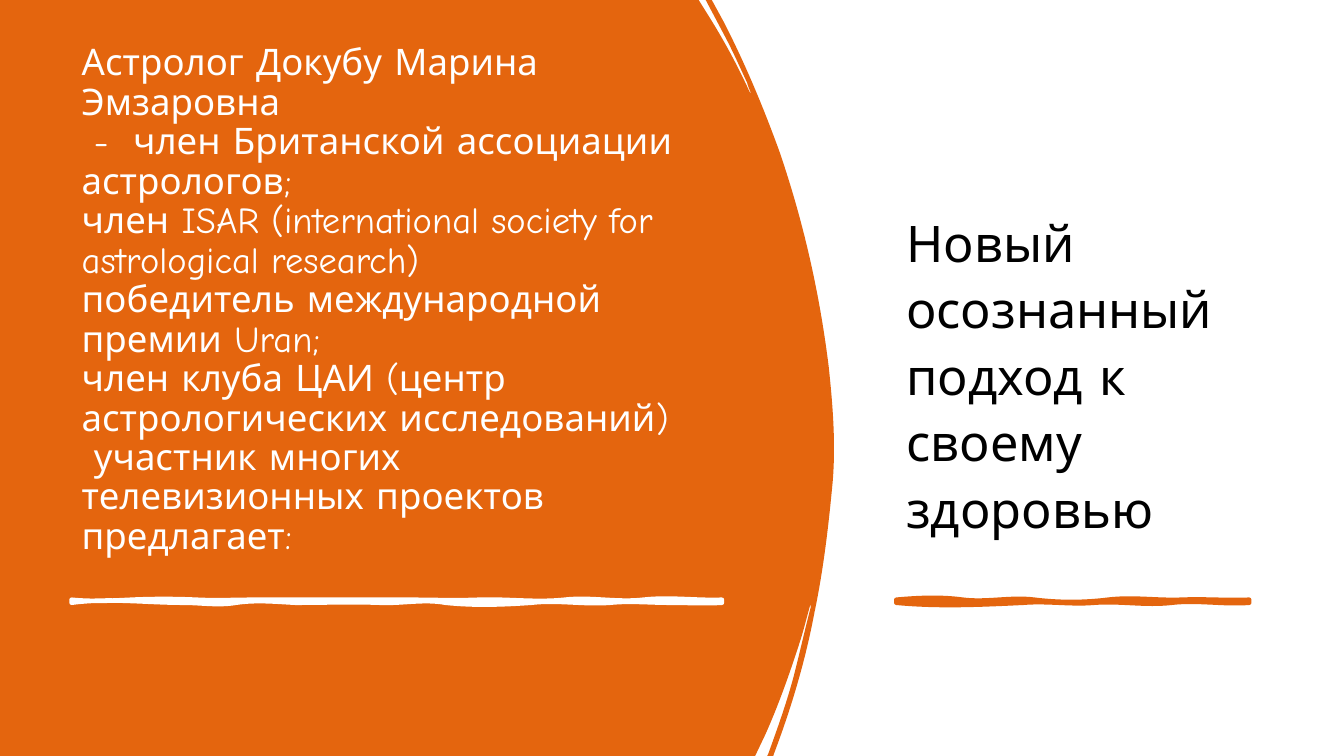
import lxml.etree
import pptx
import pptx.util
import pptx.dml.color
import pptx.enum.shapes
import pptx.enum.text
import pptx.oxml.ns

# Content
NBSP = chr(160)
TITLE_LINES = [
    "Астролог Докубу Марина Эмзаровна",
    f"{NBSP}-{NBSP} член Британской ассоциации астрологов; ",
    f"член ISAR (international society for astrological research){NBSP}",
    "победитель международной премии Uran;",
    "член клуба ЦАИ (центр астрологических исследований)",
    f"{NBSP}участник многих телевизионных{NBSP}проектов",
    "предлагает:",
]
BODY = "Новый осознанный подход к своему здоровью"

# Panel outline in inches: two numbers make a line, six a Bezier curve
PANEL = [
    (0, 0), (6.93, 0), (7.03, 0.16),
    (7.18, 0.4, 7.31, 0.64, 7.43, 0.9),
    (7.43, 0.91, 7.44, 0.92, 7.45, 0.93),
    (7.44, 0.9, 7.42, 0.86, 7.41, 0.82),
    (7.34, 0.67, 7.27, 0.51, 7.19, 0.36),
    (7, 0), (7.06, 0), (7.18, 0.22),
    (7.39, 0.63, 7.57, 1.06, 7.73, 1.5),
    (7.97, 2.2, 8.13, 2.91, 8.22, 3.64),
    (8.26, 4.02, 8.29, 4.39, 8.26, 4.77),
    (8.22, 5.2, 8.17, 5.64, 8.08, 6.07),
    (7.99, 6.55, 7.85, 7.02, 7.68, 7.47),
    (7.67, 7.5), (7.61, 7.5), (7.62, 7.48),
    (7.71, 7.23, 7.8, 6.98, 7.87, 6.72),
    (7.93, 6.49, 7.98, 6.26, 8.04, 6.03),
    (8.04, 6.02, 8.04, 6.01, 8.04, 5.99),
    (8, 6.13, 7.97, 6.26, 7.93, 6.38),
    (7.83, 6.69, 7.72, 7, 7.59, 7.29),
    (7.49, 7.5), (0, 7.5),
]

# Brush rules: start, then (knot x, bend of the first and second handle)
RULE_TOP, RULE_BOTTOM = 5.95, 5.98
TITLE_RULE = (
    0.71,
    [(1.3, 0.02, 0.01), (1.95, -0.01, -0.01), (2.54, 0.01, 0), (3.32, 0, 0),
     (4.04, 0, 0), (4.75, 0, 0.01), (5.6, -0.01, 0.03), (6.38, -0.03, 0.03),
     (7.16, -0.03, 0.01)],
    [(6.64, 0.01, 0), (6.05, 0, -0.02), (5.27, 0.02, -0.03), (4.42, 0.02, 0.03),
     (3.77, -0.04, 0.01), (2.93, -0.01, 0), (2.34, -0.01, -0.03),
     (1.82, 0.03, 0), (0.71, 0, -0.05)],
)
BODY_RULE = (
    8.89,
    [(9.55, -0.02, -0.03), (10.26, 0.03, -0.03), (10.99, 0.03, 0.03),
     (11.72, -0.03, 0.01), (12.39, -0.01, 0.01)],
    [(11.62, 0.02, -0.03), (10.85, 0.03, -0.02), (10.15, 0.02, -0.02),
     (8.89, 0.02, 0.04)],
)

THEME = {
    "font": "Comic Neue",
    "accent": pptx.dml.color.RGBColor.from_string("E4650E"),
    "light": pptx.dml.color.RGBColor.from_string("FFFFFF"),
    "dark": pptx.dml.color.RGBColor.from_string("000000"),
    "title": 26.1, "body": 36, "rule": 3.25,
}
WIDTH, HEIGHT = 13.33, 7.5
inch = pptx.util.Inches
qn = pptx.oxml.ns.qn


def rule_outline(start, top, bottom):
    """Wavy upper edge left to right, then the lower edge back."""
    outline, x0 = [(start, RULE_TOP)], start
    for y, edge in ((RULE_TOP, top), (RULE_BOTTOM, bottom)):
        if y == RULE_BOTTOM:
            outline.append((x0, y))
        for x, a, b in edge:
            third = (x - x0) / 3
            outline.append((x0 + third, y + a, x - third, y + b, x, y))
            x0 = x
    return outline


def paint(sp, color, line=None):
    sp.shadow.inherit = False
    sp.fill.solid()
    sp.fill.fore_color.rgb = color
    if line:
        sp.line.color.rgb = color
        sp.line.width = pptx.util.Pt(line)
    else:
        sp.line.fill.background()


def add_outline(slide, outline, color, line=None):
    ends = [(inch(seg[-2]), inch(seg[-1])) for seg in outline]
    builder = slide.shapes.build_freeform(*ends[0], scale=1.0)
    builder.add_line_segments(ends[1:], close=True)
    sp = builder.convert_to_shape()
    # Bend the straight segments that have handles
    for node, seg in zip(sp._element.xpath(".//a:lnTo"), outline[1:]):
        if len(seg) == 6:
            node.tag = qn("a:cubicBezTo")
            for i in (0, 2):
                pt = lxml.etree.Element(qn("a:pt"))
                pt.set("x", str(inch(seg[i]) - sp.left))
                pt.set("y", str(inch(seg[i + 1]) - sp.top))
                node.insert(i // 2, pt)
    paint(sp, color, line)


def write(sp, box, lines, size, color, spacing, before=0):
    sp.left, sp.top, sp.width, sp.height = map(inch, box)
    tf = sp.text_frame
    tf.word_wrap = True
    tf.auto_size = pptx.enum.text.MSO_AUTO_SIZE.NONE
    tf.vertical_anchor = pptx.enum.text.MSO_ANCHOR.BOTTOM
    p = tf.paragraphs[0]
    p.alignment = pptx.enum.text.PP_ALIGN.LEFT
    p.line_spacing = spacing
    p.space_before = pptx.util.Pt(before)
    for i, line in enumerate(lines):
        if i:
            p.add_line_break()
        r = p.add_run()
        r.text = line
        r.font.name = THEME["font"]
        r.font.size = pptx.util.Pt(size)
        r.font.color.rgb = color


def main():
    prs = pptx.Presentation()
    prs.slide_width, prs.slide_height = inch(WIDTH), inch(HEIGHT)
    slide = prs.slides.add_slide(prs.slide_layouts[5])

    # Background and curved panel
    backdrop = slide.shapes.add_shape(
        pptx.enum.shapes.MSO_SHAPE.RECTANGLE, 0, 0, prs.slide_width, prs.slide_height)
    paint(backdrop, THEME["light"])
    add_outline(slide, PANEL, THEME["accent"])

    # Title, raised above the panel
    title = slide.shapes.title
    slide.shapes._spTree.append(title._element)
    write(title, (0.71, 1.42, 6.45, 4.16), TITLE_LINES,
          THEME["title"], THEME["light"], 0.9)

    # Statement on the right
    body = slide.shapes.add_textbox(0, 0, 0, 0)
    write(body, (8.89, 1.23, 3.53, 4.16), [BODY], THEME["body"], THEME["dark"], 1.1, 10)

    # Brush rules under both texts
    for rule, color in ((TITLE_RULE, "light"), (BODY_RULE, "accent")):
        add_outline(slide, rule_outline(*rule), THEME[color], THEME["rule"])

    prs.save("out.pptx")


if __name__ == "__main__":
    main()
